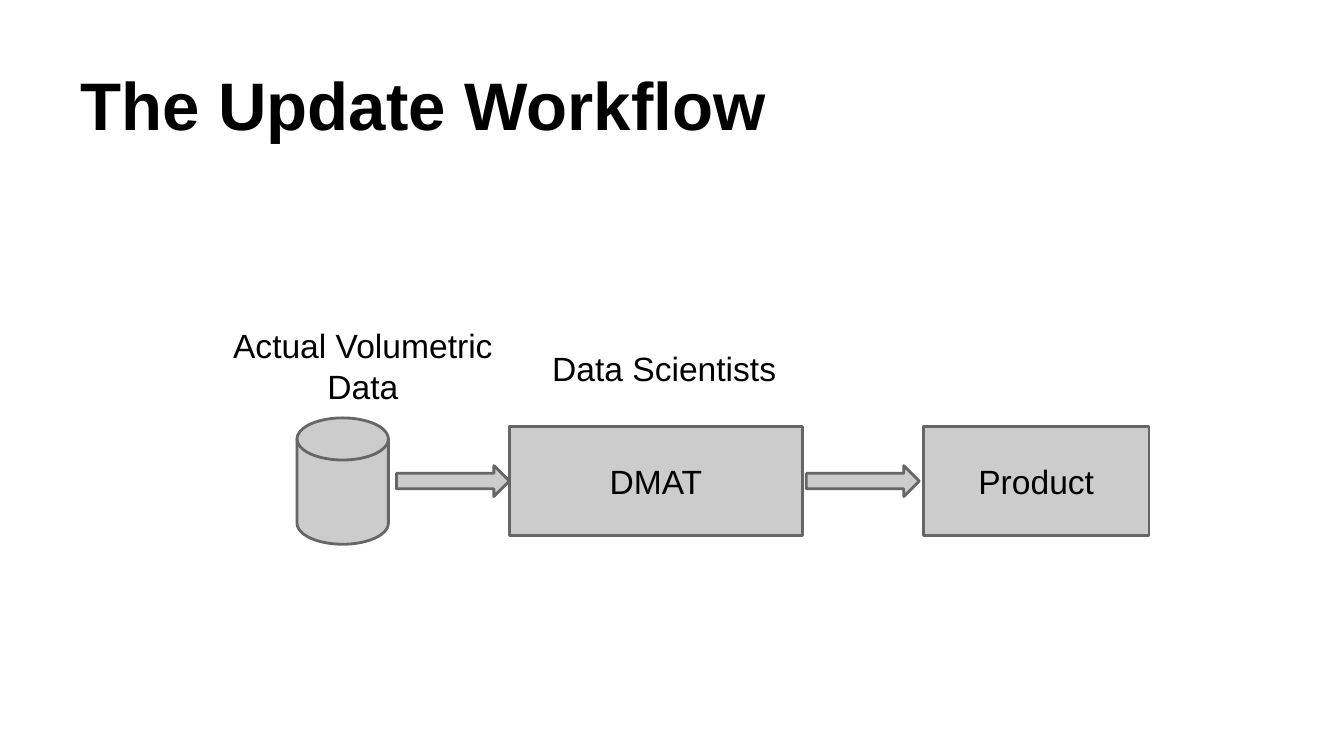
from dataclasses import dataclass

from pptx import Presentation
from pptx.dml.color import RGBColor
from pptx.enum.shapes import MSO_SHAPE as Preset
from pptx.enum.text import MSO_ANCHOR as Anchor, PP_ALIGN as Align
from pptx.util import Inches, Pt

BLACK = RGBColor(0x00, 0x00, 0x00)
LIGHT_GRAY = RGBColor(0xCC, 0xCC, 0xCC)
DARK_GRAY = RGBColor(0x66, 0x66, 0x66)
FONT = "Arial"
SLIDE_WIDTH = Inches(10)
SLIDE_HEIGHT = SLIDE_WIDTH * 9 // 16
CENTER_Y = 3.58  # shared axis of the workflow row


@dataclass(frozen=True)
class Label:
    text: str
    left: float
    top: float
    width: float
    height: float
    align: Align = Align.LEFT
    anchor: Anchor = Anchor.TOP
    size: int = 18
    bold: bool = False


@dataclass(frozen=True)
class Step:
    preset: Preset
    left: float
    width: float
    height: float
    text: str = ""


TITLE = Label("The Update Workflow", 0.5, 0.23, 9, 0.94,
              anchor=Anchor.BOTTOM, size=36, bold=True)
LABELS = [
    Label("Actual Volumetric Data", 1.61, 2.32, 2.18, 0.81, Align.CENTER),
    Label("Data Scientists", 4.01, 2.49, 2.12, 0.51),
]
STEPS = [
    Step(Preset.RECTANGLE, 3.79, 2.18, 0.81, "DMAT"),
    Step(Preset.FLOWCHART_MAGNETIC_DISK, 2.21, 0.68, 0.94),
    Step(Preset.RIGHT_ARROW, 2.95, 0.84, 0.23),
    Step(Preset.RIGHT_ARROW, 6, 0.84, 0.23),
    Step(Preset.RECTANGLE, 6.87, 1.68, 0.81, "Product"),
]


def write_text(shape, text: str, align: Align, anchor: Anchor,
               size: int = 18, bold: bool = False) -> None:
    frame = shape.text_frame
    frame.word_wrap = True
    frame.vertical_anchor = anchor
    frame.margin_left = frame.margin_right = Inches(0.1)
    frame.margin_top = frame.margin_bottom = Inches(0.1)
    paragraph = frame.paragraphs[0]
    paragraph.alignment = align
    run = paragraph.add_run()
    run.text = text
    run.font.name = FONT
    run.font.size = Pt(size)
    run.font.bold = bold
    run.font.color.rgb = BLACK


def add_label(slide, label: Label) -> None:
    box = slide.shapes.add_textbox(Inches(label.left), Inches(label.top),
                                   Inches(label.width), Inches(label.height))
    write_text(box, label.text, label.align, label.anchor,
               label.size, label.bold)


def add_step(slide, step: Step) -> None:
    shape = slide.shapes.add_shape(
        step.preset, Inches(step.left), Inches(CENTER_Y - step.height / 2),
        Inches(step.width), Inches(step.height))
    shape.shadow.inherit = False
    shape.fill.solid()
    shape.fill.fore_color.rgb = LIGHT_GRAY
    shape.line.color.rgb = DARK_GRAY
    shape.line.width = Pt(1.5)
    if step.text:
        write_text(shape, step.text, Align.CENTER, Anchor.MIDDLE)


def main() -> None:
    presentation = Presentation()
    presentation.slide_width = SLIDE_WIDTH
    presentation.slide_height = SLIDE_HEIGHT
    slide = presentation.slides.add_slide(presentation.slide_layouts[6])

    # Title
    add_label(slide, TITLE)

    # Workflow row
    for step in STEPS:
        add_step(slide, step)

    # Captions above the row
    for label in LABELS:
        add_label(slide, label)

    presentation.save("out.pptx")


if __name__ == "__main__":
    main()
